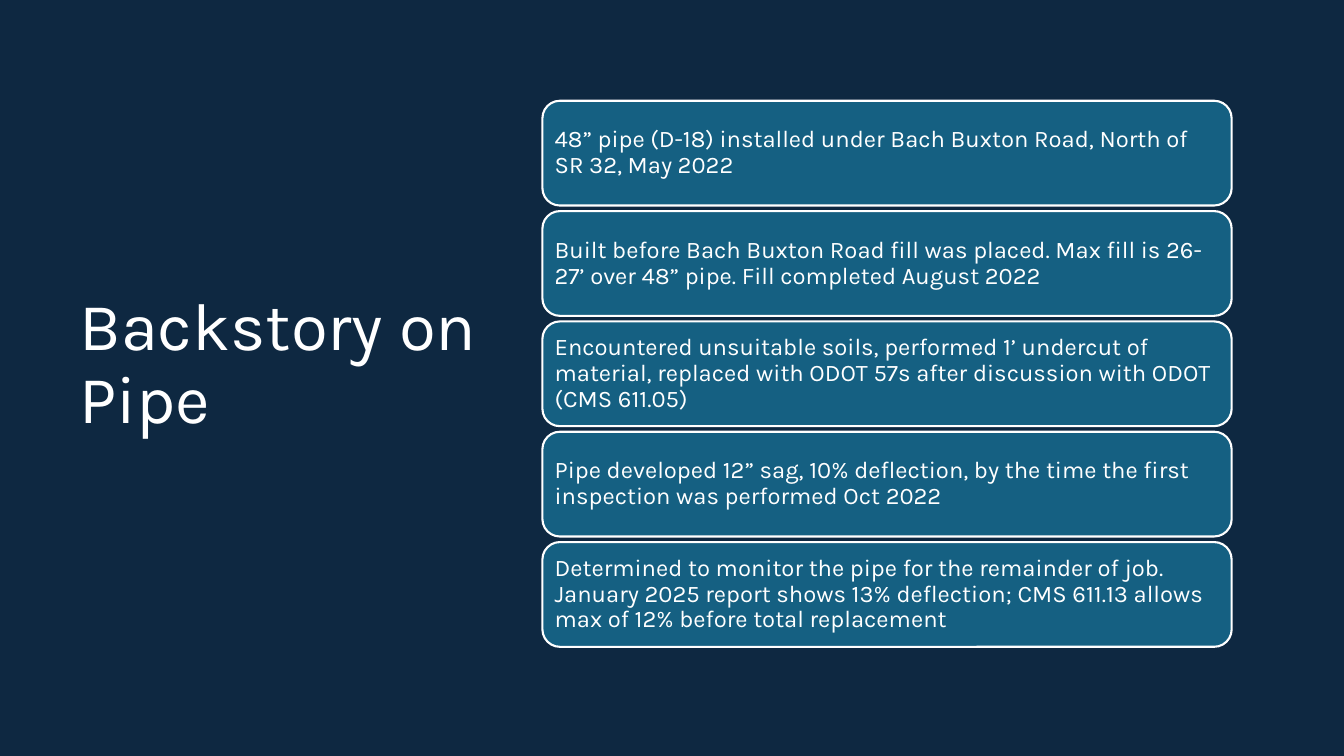
"""Build the pipe backstory slide: a title beside five stacked milestone cards."""
from pptx import Presentation
from pptx.dml.color import RGBColor
from pptx.enum.shapes import MSO_SHAPE
from pptx.enum.text import MSO_ANCHOR, PP_ALIGN
from pptx.util import Cm, Pt

TITLE = "Backstory on Pipe"
MILESTONES = [
    "48” pipe (D-18) installed under Bach Buxton Road, North of SR 32, May 2022",
    "Built before Bach Buxton Road fill was placed. Max fill is 26-27’ over 48” pipe. "
    "Fill completed August 2022",
    "Encountered unsuitable soils, performed 1’ undercut of material, replaced with "
    "ODOT 57s after discussion with ODOT (CMS 611.05)",
    "Pipe developed 12” sag, 10% deflection, by the time the first inspection was "
    "performed Oct 2022",
    "Determined to monitor the pipe for the remainder of job. January 2025 report shows "
    "13% deflection; CMS 611.13 allows max of 12% before total replacement",
]

NAVY = RGBColor(0x0E, 0x28, 0x41)
TEAL = RGBColor(0x15, 0x60, 0x82)
WHITE = RGBColor(0xFF, 0xFF, 0xFF)
FONT = "Karla"
ROUNDED = MSO_SHAPE.ROUNDED_RECTANGLE
MIDDLE = MSO_ANCHOR.MIDDLE
LEFT = PP_ALIGN.LEFT

CARD_LEFT, CARD_TOP = 13.67, 2.54
CARD_WIDTH, CARD_HEIGHT = 17.37, 2.64
CARD_PITCH = 2.78
CARD_INSET = Cm(0.18)


def write(frame, text, size):
    """Fill a frame with left-aligned, vertically centred white text."""
    frame.word_wrap = True
    frame.vertical_anchor = MIDDLE
    frame.text = text
    paragraph = frame.paragraphs[0]
    paragraph.alignment = LEFT
    paragraph.line_spacing = 0.9
    font = paragraph.runs[0].font
    font.name, font.size = FONT, Pt(size)
    font.color.rgb = WHITE


def add_milestone(slide, index, text):
    """Place one milestone card in the stack."""
    card = slide.shapes.add_shape(
        ROUNDED, Cm(CARD_LEFT), Cm(CARD_TOP + index * CARD_PITCH),
        Cm(CARD_WIDTH), Cm(CARD_HEIGHT))
    card.shadow.inherit = False
    card.fill.solid()
    card.fill.fore_color.rgb = TEAL
    card.line.color.rgb = WHITE
    card.line.width = Pt(1.5)
    frame = card.text_frame
    frame.margin_left = frame.margin_right = CARD_INSET
    frame.margin_top = frame.margin_bottom = CARD_INSET
    write(frame, text, 17)


def main():
    """Assemble and save the slide."""
    deck = Presentation()
    deck.slide_width, deck.slide_height = Cm(33.87), Cm(19.05)
    slide = deck.slides.add_slide(deck.slide_layouts[6])
    slide.background.fill.solid()
    slide.background.fill.fore_color.rgb = NAVY

    title = slide.shapes.add_textbox(Cm(1.75), Cm(1.37), Cm(11.66), Cm(15.67))
    write(title.text_frame, TITLE, 48)
    for index, text in enumerate(MILESTONES):
        add_milestone(slide, index, text)
    deck.save("out.pptx")


if __name__ == "__main__":
    main()
